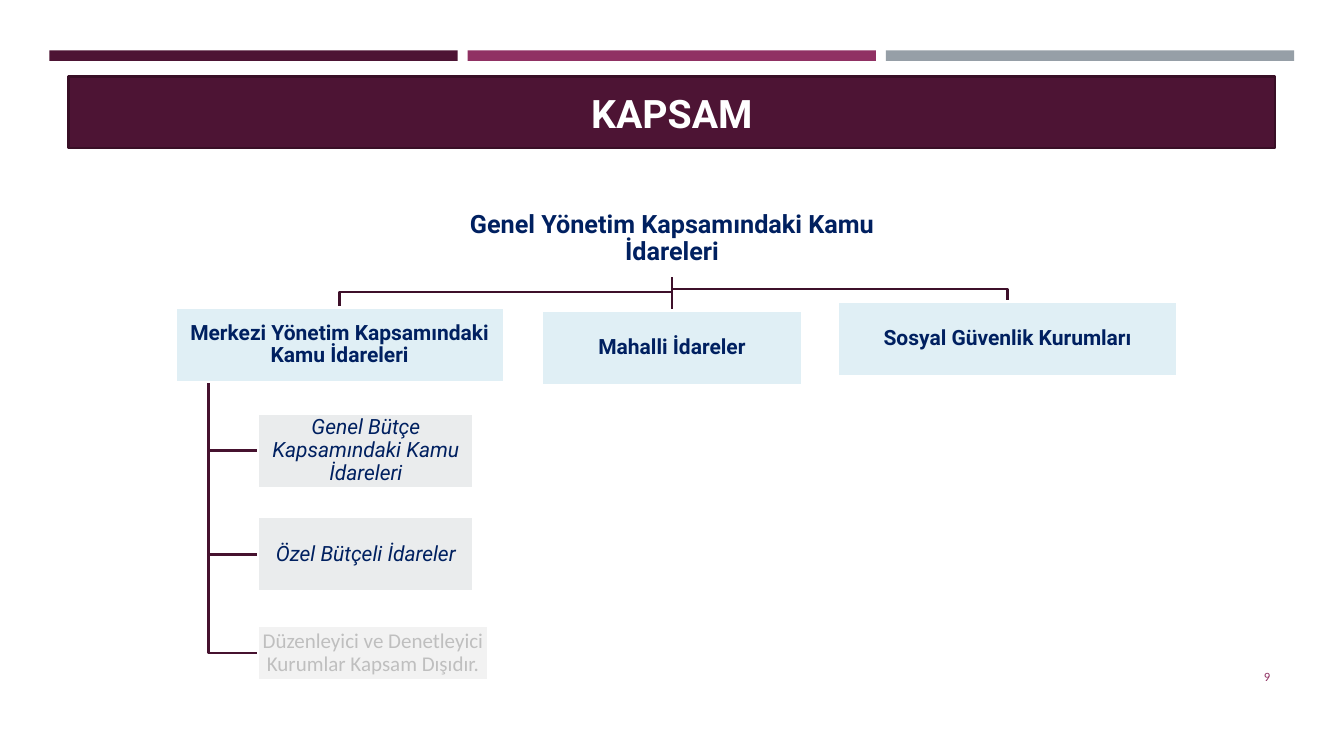
from dataclasses import dataclass

from lxml import etree
from pptx import Presentation
from pptx.dml.color import RGBColor
from pptx.enum.shapes import MSO_CONNECTOR, MSO_SHAPE
from pptx.enum.text import MSO_ANCHOR, PP_ALIGN
from pptx.oxml.ns import qn
from pptx.util import Inches, Pt

RECTANGLE = MSO_SHAPE.RECTANGLE
STRAIGHT = MSO_CONNECTOR.STRAIGHT
MIDDLE = MSO_ANCHOR.MIDDLE
CENTER, RIGHT = PP_ALIGN.CENTER, PP_ALIGN.RIGHT

SLIDE_WIDTH, SLIDE_HEIGHT = Inches(13.333), Inches(7.5)
LINE_WIDTH = Pt(1.75)
TITLE_ONLY = 5
BOTTOM, TOP = 2, 0

PLUM, PINK, GREY = "4D1434", "903163", "969FA7"
WHITE, NAVY, FADED = "FFFFFF", "002060", "BFBFBF"
BRANCH_LINE, TRUNK_LINE = "3E102A", "46122F"


@dataclass(frozen=True)
class Style:
    fill: str
    color: str = NAVY
    size: int = 15
    font: str = "Roboto"
    bold: bool = False
    italic: bool = False


@dataclass(frozen=True)
class Node:
    """A chart box; lengths are percentages of the slide's size."""
    text: str
    left: float
    top: float
    width: float
    style: Style
    height: float = 9.87

    @property
    def center(self) -> float:
        return self.left + self.width / 2

    @property
    def middle(self) -> float:
        return self.top + self.height / 2

    @property
    def bottom(self) -> float:
        return self.top + self.height


ROOT_STYLE = Style(WHITE, size=18, bold=True)
GROUP_STYLE = Style("E0EFF5", bold=True)
BUDGET_STYLE = Style("EAECED", italic=True)
EXCLUDED_STYLE = Style("F2F2F2", color=FADED, font="Calibri")

general = Node("Genel Yönetim Kapsamındaki Kamu İdareleri", 34.62, 26.67, 30.76, ROOT_STYLE)
central = Node("Merkezi Yönetim Kapsamındaki Kamu İdareleri", 13.05, 40.67, 24.45, GROUP_STYLE)
local = Node("Mahalli İdareler", 40.28, 41.07, 19.44, GROUP_STYLE)
social = Node("Sosyal Güvenlik Kurumları", 62.33, 39.87, 25.28, GROUP_STYLE)
central_parts = [
    Node("Genel Bütçe Kapsamındaki Kamu İdareleri", 19.2, 54.67, 16.05, BUDGET_STYLE),
    Node("Özel Bütçeli İdareler", 19.2, 68.4, 16.05, BUDGET_STYLE),
    Node("Düzenleyici ve Denetleyici Kurumlar Kapsam Dışıdır.",
         19.2, 82.8, 17.1, EXCLUDED_STYLE, height=7.2),
]


def across(percent: float) -> int:
    return round(SLIDE_WIDTH * percent / 100)


def down(percent: float) -> int:
    return round(SLIDE_HEIGHT * percent / 100)


def frame(left: float, top: float, width: float, height: float) -> tuple[int, int, int, int]:
    return across(left), down(top), across(width), down(height)


def rgb(value: str) -> RGBColor:
    return RGBColor.from_string(value)


def paint(shape, fill: str, line: str | None = None) -> None:
    shape.fill.solid()
    shape.fill.fore_color.rgb = rgb(fill)
    if line:
        shape.line.color.rgb = rgb(line)
        shape.line.width = LINE_WIDTH
    else:
        shape.line.fill.background()


def write(shape, text: str, style: Style, align: PP_ALIGN = CENTER, spacing: float = 1.0) -> None:
    text_frame = shape.text_frame
    text_frame.word_wrap = True
    text_frame.vertical_anchor = MIDDLE
    text_frame.text = text
    paragraph = text_frame.paragraphs[0]
    paragraph.alignment = align
    paragraph.line_spacing = spacing
    font = paragraph.font
    font.name, font.size = style.font, Pt(style.size)
    font.bold, font.italic = style.bold, style.italic
    font.color.rgb = rgb(style.color)


def add_bar(slide, place: tuple[int, int, int, int], fill: str, line: str | None = None):
    bar = slide.shapes.add_shape(RECTANGLE, *place)
    bar.shadow.inherit = False
    paint(bar, fill, line)
    return bar


def add_node(slide, node: Node):
    place = frame(node.left, node.top, node.width, node.height)
    box = add_bar(slide, place, node.style.fill, WHITE)
    write(box, node.text, node.style, spacing=0.9)
    text_frame = box.text_frame
    text_frame.margin_left = text_frame.margin_right = across(0.08)
    text_frame.margin_top = text_frame.margin_bottom = down(0.13)
    return box


def add_bent_line(slide, points: list[tuple[float, float]], color: str) -> None:
    start, *corners = [(across(x), down(y)) for x, y in points]
    builder = slide.shapes.build_freeform(*start)
    builder.add_line_segments(corners, close=False)
    bent_line = builder.convert_to_shape()
    bent_line.shadow.inherit = False
    bent_line.fill.background()
    bent_line.line.color.rgb = rgb(color)
    bent_line.line.width = LINE_WIDTH


def add_straight_line(slide, upper: Node, lower: Node, color: str):
    line = slide.shapes.add_connector(
        STRAIGHT, across(upper.center), down(upper.bottom), across(lower.center), down(lower.top))
    line.line.color.rgb = rgb(color)
    line.line.width = LINE_WIDTH
    etree.SubElement(line.element.spPr, qn("a:effectLst"))
    return line


def main() -> None:
    presentation = Presentation()
    presentation.slide_width, presentation.slide_height = SLIDE_WIDTH, SLIDE_HEIGHT
    slide = presentation.slides.add_slide(presentation.slide_layouts[TITLE_ONLY])

    # Accent stripes along the top
    for column, color in enumerate((PLUM, PINK, GREY)):
        add_bar(slide, frame(3.68 + column * 31.12, 6.67, 30.38, 1.4), color)

    # Title band
    title = slide.shapes.title
    title.left, title.top, title.width, title.height = frame(5.1, 10.13, 89.78, 9.47)
    paint(title, PLUM, "390F26")
    write(title, "KAPSAM", Style(PLUM, WHITE, 28, bold=True))

    # Slide number
    number = slide.shapes.add_textbox(*frame(86.62, 86.8, 8.62, 5.33))
    write(number, "9", Style(WHITE, PINK, 9, "Calibri"), RIGHT)

    # Lines from the root to its three groups
    for group in (social, central):
        bend = (general.bottom + group.top) / 2
        add_bent_line(slide, [(general.center, general.bottom), (general.center, bend),
                              (group.center, bend), (group.center, group.top)], BRANCH_LINE)
    local_line = add_straight_line(slide, general, local, BRANCH_LINE)

    # Lines from the central group to its parts
    trunk = central.left + central.width / 10
    for part in central_parts:
        add_bent_line(slide, [(trunk, central.bottom), (trunk, part.middle),
                              (part.left, part.middle)], TRUNK_LINE)

    # Boxes of the chart
    general_box = add_node(slide, general)
    local_box = add_node(slide, local)
    for node in (central, social, *central_parts):
        add_node(slide, node)
    local_line.begin_connect(general_box, BOTTOM)
    local_line.end_connect(local_box, TOP)

    presentation.save("out.pptx")


if __name__ == "__main__":
    main()
